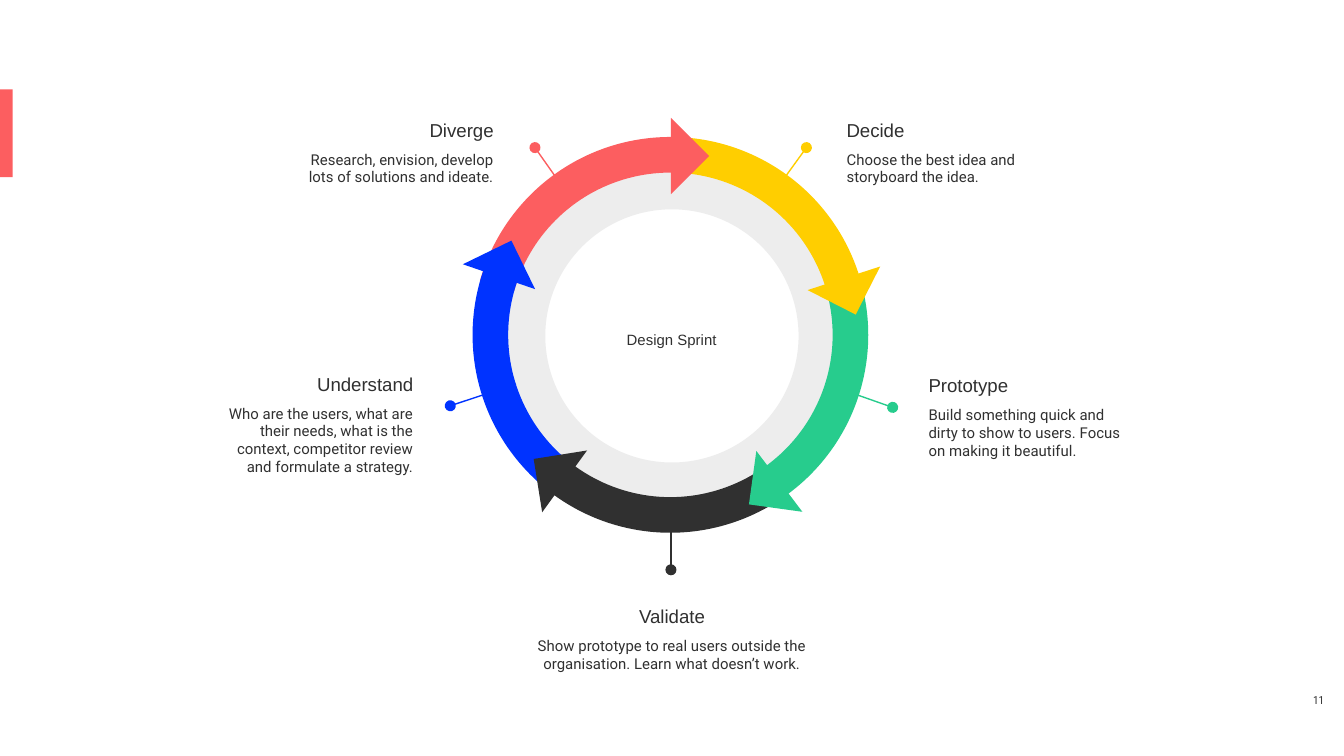
from lxml import etree
from pptx import Presentation
from pptx.dml.color import RGBColor
from pptx.enum import shapes, text
from pptx.oxml import ns
from pptx.util import Cm, Pt

RED, YELLOW, GREEN = "FC5E60", "FFCE00", "27CC8D"
BLUE, DARK, GREY = "0033FF", "303030", "EDEDED"
LEFT, CENTER, RIGHT = text.PP_ALIGN.LEFT, text.PP_ALIGN.CENTER, text.PP_ALIGN.RIGHT
KIND = shapes.MSO_SHAPE

deck = Presentation()
deck.slide_width, deck.slide_height = Cm(25.4), Cm(14.29)
page = deck.slides.add_slide(deck.slide_layouts[6])


def add_filled(kind, left, top, width, height, color, rotation=0):
    shape = page.shapes.add_shape(kind, Cm(left), Cm(top), Cm(width), Cm(height))
    shape.shadow.inherit = False
    shape.fill.solid()
    shape.fill.fore_color.rgb = RGBColor.from_string(color)
    shape.line.fill.background()
    shape.rotation = rotation
    return shape


def add_text(left, top, width, height, align, lines, anchor=text.MSO_ANCHOR.TOP):
    """Add a box with one paragraph per (wording, font, size, line spacing, space before)."""
    box = page.shapes.add_textbox(Cm(left), Cm(top), Cm(width), Cm(height))
    frame = box.text_frame
    frame.word_wrap = True
    frame.vertical_anchor = anchor
    frame.margin_left = frame.margin_right = Cm(0.25)
    frame.margin_top = frame.margin_bottom = Cm(0.25)
    frame.text = "\n".join(line[0] for line in lines)
    for para, (_, font, size, spacing, before) in zip(frame.paragraphs, lines):
        para.alignment = align
        para.line_spacing = spacing
        para.space_before = Pt(before)
        for span in para.runs:
            span.font.name = font
            span.font.size = Pt(size)
            span.font.color.rgb = RGBColor.from_string(DARK)


add_filled(KIND.RECTANGLE, 0, 1.69, 0.24, 1.66, RED)
add_text(24.16, 13, 1.52, 0.48, CENTER, [("11", "Roboto Condensed", 6, 1.0, 0)],
         text.MSO_ANCHOR.MIDDLE)
inner_ring = add_filled(KIND.DONUT, 9.17, 2.82, 7.06, 7.06, GREY)
inner_ring.adjustments[0] = 0.161

# Heading, description, colour, alignment, text box, dot, line end at the ring
callouts = [
    ("Decide", "Choose the best idea and storyboard the idea.",
     YELLOW, LEFT, (15.75, 1.93, 4.17, 1.85), (15.24, 2.79), (14.48, 3.84)),
    ("Diverge", "Research, envision, develop lots of solutions and ideate.",
     RED, RIGHT, (5.41, 1.93, 4.17, 2.24), (10.11, 2.79), (10.85, 3.84)),
    ("Prototype", "Build something quick and dirty to show to users. "
     "Focus on making it beautiful.",
     GREEN, LEFT, (17.3, 6.76, 4.17, 1.85), (16.87, 7.7), (15.62, 7.26)),
    ("Understand", "Who are the users, what are their needs, what is the context, "
     "competitor review and formulate a strategy.",
     BLUE, RIGHT, (3.89, 6.73, 4.17, 3.84), (8.51, 7.67), (9.75, 7.26)),
    ("Validate", "Show prototype to real users outside the organisation. "
     "Learn what doesn’t work.",
     DARK, CENTER, (9.17, 11.13, 7.06, 1.85), (12.68, 10.77), (12.68, 9.42)),
]
for heading, description, color, align, area, dot, end in callouts:
    pointer = page.shapes.add_connector(
        shapes.MSO_CONNECTOR.STRAIGHT, *(Cm(value) for value in dot + end))
    pointer.line.color.rgb = RGBColor.from_string(color)
    pointer.line.width = Pt(0.75)
    properties = pointer._element.spPr
    outline = properties.find(ns.qn("a:ln"))
    etree.SubElement(outline, ns.qn("a:headEnd"), type="oval")
    etree.SubElement(properties, ns.qn("a:effectLst"))
    add_text(*area, align, [(heading, "Arial", 10, 1.14, 0),
                            (description, "Roboto", 8, 1.0, 5)])

add_text(10.69, 5.28, 4.01, 2.24, CENTER, [("Design Sprint", "Arial", 8, 1.15, 0)],
         text.MSO_ANCHOR.MIDDLE)

# Colour, rotation, mirrored, (start, end, thickness)
arcs = [
    (YELLOW, 30, False, (144.14, 189.99, 0.09)),
    (GREEN, 210, True, (201.79, 26.24, 0.09)),
    (RED, 330, True, (143.34, 188.55, 0.09)),
    (BLUE, 150, False, (201.85, 30.07, 0.09)),
    (DARK, 210, True, (157.39, 200.08, 0.09)),
]
for color, rotation, mirrored, settings in arcs:
    arc = add_filled(KIND.BLOCK_ARC, 8.93, 2.59, 7.48, 7.48, color, rotation)
    for index, value in enumerate(settings):
        arc.adjustments[index] = value
    if mirrored:
        arc._element.spPr.xfrm.set("flipH", "1")

arrowheads = [
    (YELLOW, 15.44, 4.75, 297),
    (BLUE, 8.92, 4.72, 154),
    (GREEN, 14.22, 8.59, 7.9),
    (DARK, 10.16, 8.59, 81),
    (RED, 12.17, 2.44, 225),
]
for color, left, top, rotation in arrowheads:
    add_filled(KIND.RIGHT_TRIANGLE, left, top, 1.02, 1.02, color, rotation)

deck.save("out.pptx")
